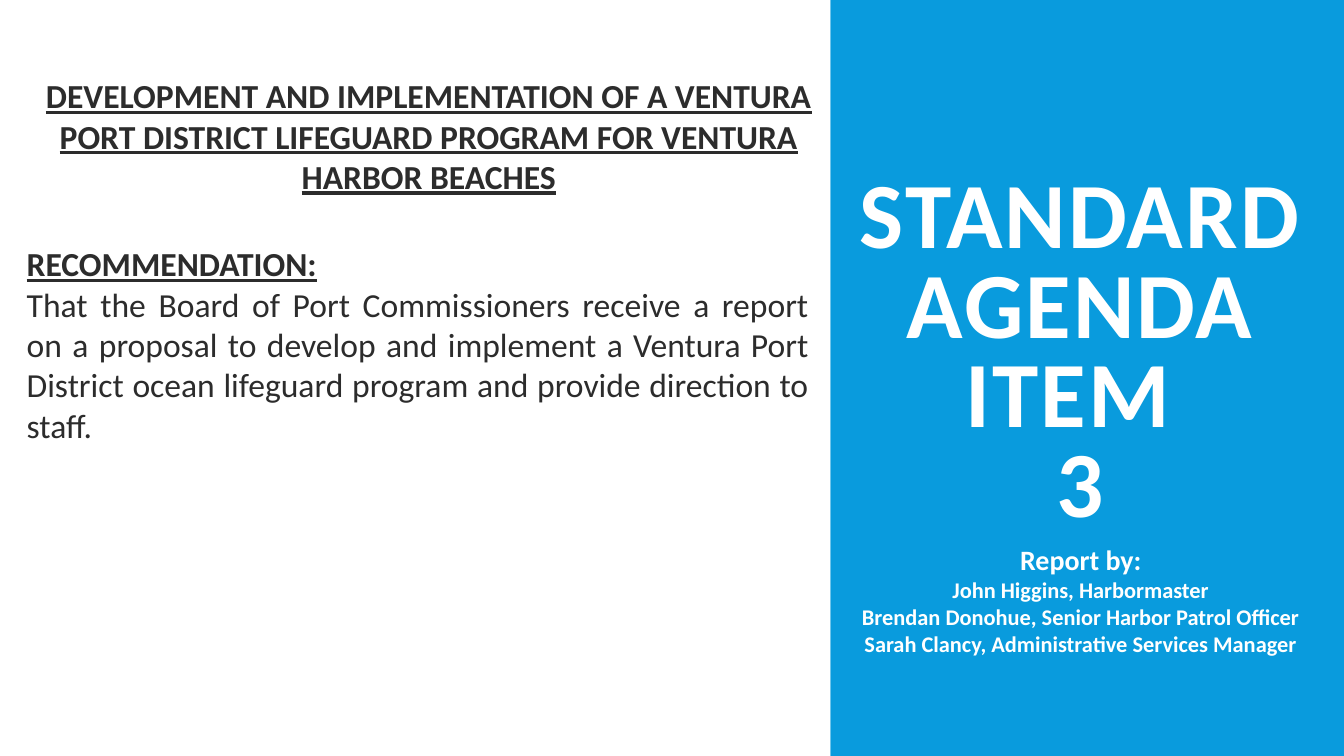
from pptx import Presentation
from pptx.dml.color import RGBColor
from pptx.enum.shapes import MSO_SHAPE
from pptx.enum.text import MSO_ANCHOR, PP_ALIGN
from pptx.util import Pt

RECT = MSO_SHAPE.RECTANGLE
TOP, MIDDLE = MSO_ANCHOR.TOP, MSO_ANCHOR.MIDDLE
LEFT, CENTER, JUST = PP_ALIGN.LEFT, PP_ALIGN.CENTER, PP_ALIGN.JUSTIFY

# Content
FONT = "Calibri"
COLORS = {"blue": "099BDD", "white": "FFFFFF", "dark": "2C2C2C"}
TITLE = "STANDARD AGENDA ITEM \v3"
TOPIC = ("DEVELOPMENT AND IMPLEMENTATION OF A VENTURA PORT DISTRICT "
         "LIFEGUARD PROGRAM FOR VENTURA HARBOR BEACHES")
ADVICE = ("That the Board of Port Commissioners receive a report on a proposal "
          "to develop and implement a Ventura Port District ocean lifeguard "
          "program and provide direction to staff.")
STAFF = ["John Higgins, Harbormaster",
         "Brendan Donohue, Senior Harbor Patrol Officer",
         "Sarah Clancy, Administrative Services Manager"]

# Layout
WIDTH, HEIGHT, SPLIT = 720, 405, 445
PANELS = [(0, SPLIT, "white"), (SPLIT, WIDTH - SPLIT, "blue")]

# Each box: place, colour, anchor, lines of (text, size, align, bold, underline)
BOXES = [
    ((450, 82.8, 257.8, 216), "white", MIDDLE,
     [(TITLE, 50, CENTER, True, False)]),
    ((7.2, 36.7, 445, 72.7), "dark", TOP,
     [(TOPIC, 18, CENTER, True, True)]),
    ((7.2, 126.7, 433.4, 116.6), "dark", TOP,
     [("RECOMMENDATION:", 18, LEFT, True, True),
      (ADVICE, 18, JUST, False, False)]),
    ((440, 287.3, 278, 69.1), "white", TOP,
     [("Report by:", 15, CENTER, True, False)]
     + [(name, 12, CENTER, True, False) for name in STAFF]),
]


def rgb(name):
    return RGBColor.from_string(COLORS[name])


def add_box(slide, place, color, anchor, lines):
    box = slide.shapes.add_textbox(*map(Pt, place))
    frame = box.text_frame
    frame.word_wrap = True
    frame.vertical_anchor = anchor
    frame.text = "\n".join(line[0] for line in lines)
    for para, (_, size, align, bold, under) in zip(frame.paragraphs, lines):
        para.alignment = align
        for run in para.runs:
            font = run.font
            font.name, font.size = FONT, Pt(size)
            font.bold, font.underline = bold, under
            font.color.rgb = rgb(color)
    return box


deck = Presentation()
deck.slide_width, deck.slide_height = Pt(WIDTH), Pt(HEIGHT)
slide = deck.slides.add_slide(deck.slide_layouts[6])
slide.background.fill.solid()
slide.background.fill.fore_color.rgb = rgb("blue")

# White and blue panels
for left, width, color in PANELS:
    panel = slide.shapes.add_shape(RECT, Pt(left), 0, Pt(width), Pt(HEIGHT))
    panel.shadow.inherit = False
    panel.fill.solid()
    panel.fill.fore_color.rgb = rgb(color)
    panel.line.fill.background()

# Text, with the title set tight in lines and wide in letters
title, *rest = [add_box(slide, *box) for box in BOXES]
head = title.text_frame.paragraphs[0]
head.line_spacing = 0.8
for run in head.runs:
    run.font._element.set("spc", "110")

deck.save("out.pptx")
